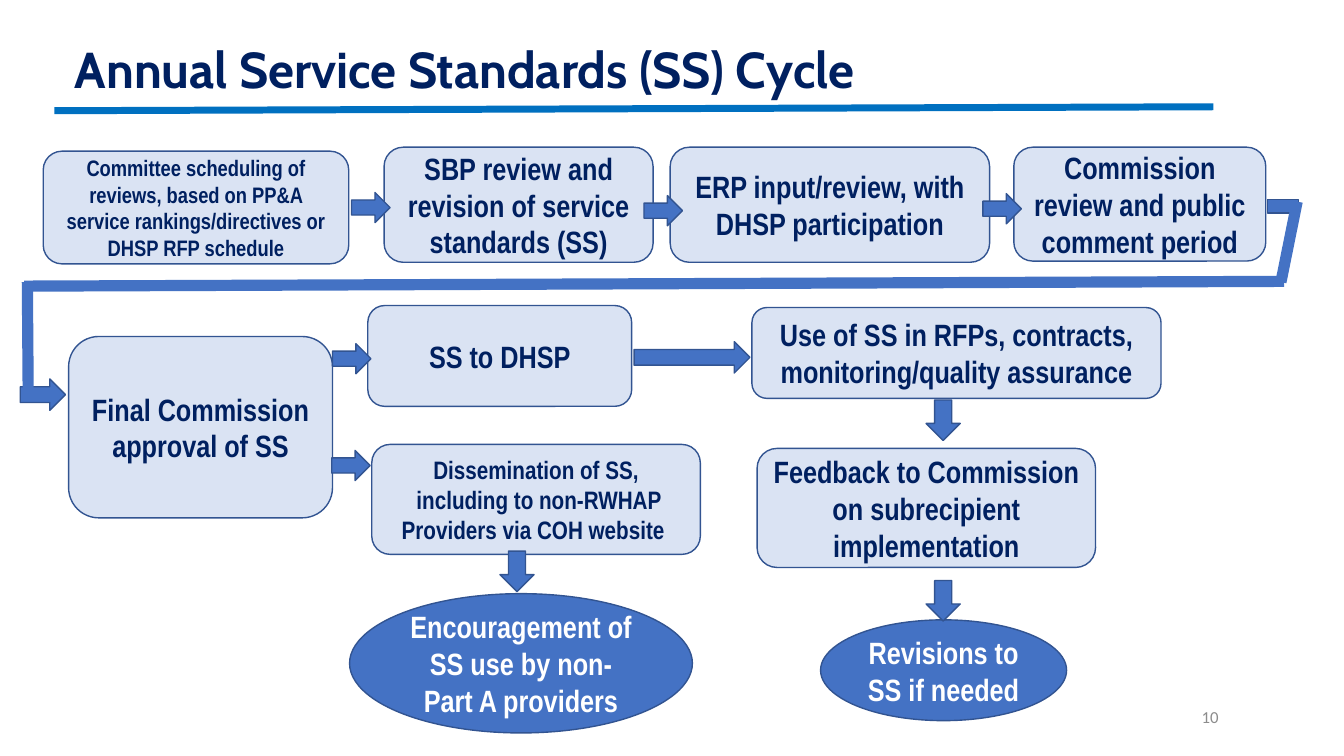
from dataclasses import dataclass
from lxml.etree import SubElement
from pptx import Presentation
from pptx.dml.color import RGBColor
from pptx.enum.shapes import MSO_CONNECTOR, MSO_SHAPE
from pptx.enum.text import MSO_ANCHOR, MSO_AUTO_SIZE, PP_ALIGN
from pptx.oxml.ns import qn
from pptx.util import Cm, Pt


@dataclass(frozen=True)
class Theme:
    navy: str = "002060"
    pale: str = "DAE3F3"
    blue: str = "4472C4"
    outline: str = "325491"
    rule: str = "0070C0"
    white: str = "FFFFFF"
    gray: str = "8C8C8C"
    title_font: str = "Cabin"
    step_font: str = "Arial Narrow"
    number_font: str = "Calibri"
    title_size: int = 36
    step_size: int = 22
    medium_size: int = 18
    small_size: int = 16
    number_size: int = 12


theme = Theme()

TITLE = "Annual Service Standards (SS) Cycle"
TITLE_AREA = (1.63, 0.64, 29.21, 2.36)
PAGE_NUMBER = "10"
NUMBER_AREA = (23.34, 17.55, 7.62, 1.02)

STEPS = [
    ("Committee scheduling of reviews, based on PP&A service rankings/directives or DHSP RFP schedule",
     (1.09, 3.81, 7.7, 2.84), theme.small_size),
    ("SBP review and revision of service standards (SS)",
     (9.68, 3.71, 6.78, 2.9), theme.step_size),
    ("ERP input/review, with DHSP participation",
     (16.89, 3.71, 8.05, 2.9), theme.step_size),
    ("Commission review and public comment period",
     (25.55, 3.71, 6.35, 2.87), theme.step_size),
    ("Final Commission approval of SS",
     (1.73, 8.48, 6.65, 4.57), theme.step_size),
    ("SS to DHSP",
     (9.27, 7.7, 6.65, 2.54), theme.step_size),
    ("Use of SS in RFPs, contracts, monitoring/quality assurance",
     (18.95, 7.75, 10.31, 2.29), theme.step_size),
    ("Dissemination of SS,\n including to non-RWHAP Providers via COH website ",
     (9.37, 11.2, 8.28, 2.77), theme.medium_size),
    ("Feedback to Commission on subrecipient implementation",
     (19.08, 11.3, 8.53, 3), theme.step_size),
]
OUTCOMES = [
    ("Encouragement of SS use by non-Part A providers", (8.81, 14.96, 8.64, 3.51)),
    ("Revisions to SS if needed", (20.68, 15.62, 6.2, 2.54)),
]

SHORT_ARROW = (0.97, 0.76)
DOWN_ARROW = (0.86, 1.02)
ARROWS = {
    MSO_SHAPE.RIGHT_ARROW: [
        ((8.86, 4.85), SHORT_ARROW),
        ((16.23, 4.93), SHORT_ARROW),
        ((24.77, 4.88), SHORT_ARROW),
        ((8.38, 8.66), SHORT_ARROW),
        ((8.36, 11.35), SHORT_ARROW),
        ((0.51, 9.55), (1.14, 0.79)),
        ((15.98, 8.61), (2.92, 0.79)),
    ],
    MSO_SHAPE.DOWN_ARROW: [
        ((23.34, 10.08), DOWN_ARROW),
        ((12.6, 13.89), DOWN_ARROW),
        ((23.34, 14.63), DOWN_ARROW),
    ],
    MSO_SHAPE.MATH_MINUS: [((31.8, 4.5), (1.07, 1.4))],
}

TITLE_RULE = (1.37, 2.79, 30.58, 2.69)
RETURN_PATH = [
    (32.36, 7.09, 0.61, 7.21),
    (32.69, 5.08, 32.28, 7.11),
    (0.69, 7.11, 0.71, 9.86),
]


def lengths(values):
    return [Cm(value) for value in values]


def color(code):
    return RGBColor.from_string(code)


def write(box, text, font, size, ink, align, bold=True):
    frame = box.text_frame
    frame.text = text
    frame.word_wrap = True
    frame.vertical_anchor = MSO_ANCHOR.MIDDLE
    for para in frame.paragraphs:
        para.alignment = align
        for span in para.runs:
            span.font.name = font
            span.font.size = Pt(size)
            span.font.bold = bold
            span.font.color.rgb = color(ink)


def add_block(page, kind, area, fill):
    block = page.shapes.add_shape(kind, *lengths(area))
    block.shadow.inherit = False
    block.fill.solid()
    block.fill.fore_color.rgb = color(fill)
    block.line.color.rgb = color(theme.outline)
    block.line.width = Pt(1)
    return block


def add_line(page, ends, ink, width):
    line = page.shapes.add_connector(MSO_CONNECTOR.STRAIGHT, *lengths(ends))
    line.line.color.rgb = color(ink)
    line.line.width = Pt(width)
    SubElement(line._element.spPr, qn("a:effectLst"))


def add_heading(page):
    title = page.shapes.title
    title.left, title.top, title.width, title.height = lengths(TITLE_AREA)
    write(title, TITLE, theme.title_font, theme.title_size, theme.navy, PP_ALIGN.LEFT)
    title.text_frame.auto_size = MSO_AUTO_SIZE.NONE
    title.text_frame.paragraphs[0].line_spacing = 0.9
    number = page.shapes.add_textbox(*lengths(NUMBER_AREA))
    write(number, PAGE_NUMBER, theme.number_font, theme.number_size, theme.gray,
          PP_ALIGN.RIGHT, bold=False)
    add_line(page, TITLE_RULE, theme.rule, 5)


def add_cycle(page):
    for text, area, size in STEPS:
        step = add_block(page, MSO_SHAPE.ROUNDED_RECTANGLE, area, theme.pale)
        write(step, text, theme.step_font, size, theme.navy, PP_ALIGN.CENTER)
    for text, area in OUTCOMES:
        outcome = add_block(page, MSO_SHAPE.OVAL, area, theme.blue)
        write(outcome, text, theme.step_font, theme.step_size, theme.white, PP_ALIGN.CENTER)
    for kind, arrows in ARROWS.items():
        for corner, size in arrows:
            add_block(page, kind, corner + size, theme.blue)
    for ends in RETURN_PATH:
        add_line(page, ends, theme.blue, 8)


def main():
    deck = Presentation()
    deck.slide_width, deck.slide_height = lengths((33.87, 19.05))
    page = deck.slides.add_slide(deck.slide_layouts[5])
    add_heading(page)
    add_cycle(page)
    deck.save("out.pptx")


if __name__ == "__main__":
    main()
